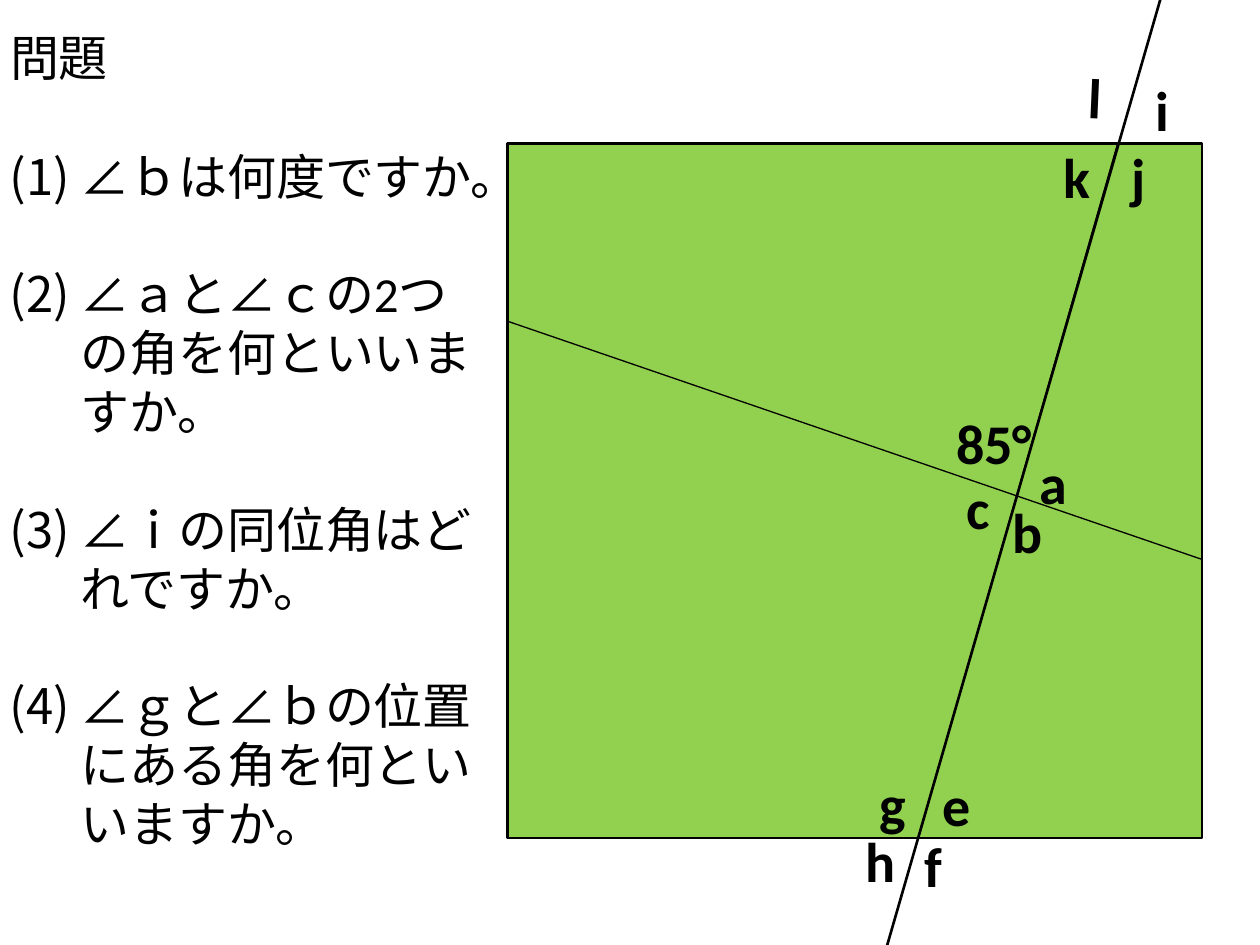
from dataclasses import dataclass

from lxml.etree import SubElement
from pptx import Presentation
from pptx.dml.color import RGBColor
from pptx.enum.shapes import MSO_CONNECTOR, MSO_SHAPE
from pptx.enum.text import MSO_ANCHOR, PP_ALIGN
from pptx.oxml.ns import qn
from pptx.util import Inches, Pt


@dataclass(frozen=True)
class Theme:
    font: str = "Calibri"
    ink: RGBColor = RGBColor(0x00, 0x00, 0x00)
    paper: RGBColor = RGBColor(0x92, 0xD0, 0x50)
    body_size: float = 28
    label_size: float = 32
    question_gap: float = 33.7
    thin: float = 0.75
    thick: float = 1.5


@dataclass(frozen=True)
class Box:
    left: float
    top: float
    width: float
    height: float

    def inches(self):
        return [Inches(v) for v in (self.left, self.top, self.width, self.height)]


THEME = Theme()
HEADING_BOX = Box(-0.02, 0.17, 3.92, 0.57)
QUESTIONS_BOX = Box(-0.02, 1.11, 3.92, 5.76)
SQUARE_BOX = Box(4.03, 1.14, 5.51, 5.51)

QUESTIONS = [
    "∠ｂは何度ですか。",
    "∠ａと∠ｃの2つの角を何といいますか。",
    "∠ｉの同位角はどれですか。",
    "∠ｇと∠ｂの位置にある角を何といいますか。",
]

# Start and end measured from the square's top left corner, then width
CROSSING_LINES = [
    ((4.84, 0), (3.26, 5.51), THEME.thin),
    ((5.51, 3.3), (0, 1.41), THEME.thin),
    ((5.25, -1.39), (2.85, 6.92), THEME.thick),
]

# Text, offset from the square's top left corner, width, rotation
ANGLE_LABELS = [
    ("l", 4.51, -0.69, 0.29, 2.6),
    ("i", 5.04, -0.59, 0.29, 0),
    ("k", 4.31, -0.06, 0.42, 0),
    ("j", 4.85, -0.06, 0.43, 0),
    ("85°", 3.46, 2.05, 1.18, 0),
    ("a", 4.12, 2.37, 0.42, 0),
    ("c", 3.54, 2.57, 0.39, 0),
    ("b", 3.91, 2.76, 0.44, 0),
    ("g", 2.85, 4.92, 0.41, 0),
    ("e", 3.35, 4.93, 0.43, 0),
    ("h", 2.74, 5.37, 0.44, 0),
    ("f", 3.21, 5.41, 0.36, 0),
]
LABEL_HEIGHT = 0.64


def write(paragraph, text, size=THEME.body_size, bold=False, space_before=0):
    paragraph.alignment = PP_ALIGN.LEFT
    paragraph.space_before = Pt(space_before)
    run = paragraph.add_run()
    run.text = text
    run.font.name = THEME.font
    run.font.size = Pt(size)
    run.font.bold = bold
    run.font.color.rgb = THEME.ink


def number(paragraph, indent=0.56):
    """Give the paragraph a hanging (1), (2), ... number."""
    properties = paragraph._p.get_or_add_pPr()
    properties.set("marL", str(Inches(indent)))
    properties.set("indent", str(-Inches(indent)))
    SubElement(properties, qn("a:buFont"), typeface="+mj-lt")
    SubElement(properties, qn("a:buAutoNum"), type="arabicParenBoth")


def add_text_box(slide, box):
    text_box = slide.shapes.add_textbox(*box.inches())
    text_box.text_frame.word_wrap = True
    return text_box


def place_heading(slide, box):
    heading = slide.shapes.title
    heading.left, heading.top, heading.width, heading.height = box.inches()
    heading.text_frame.vertical_anchor = MSO_ANCHOR.TOP
    write(heading.text_frame.paragraphs[0], "問題")


def add_questions(slide, box):
    frame = add_text_box(slide, box).text_frame
    for index, question in enumerate(QUESTIONS):
        paragraph = frame.add_paragraph() if index else frame.paragraphs[0]
        write(paragraph, question, space_before=THEME.question_gap if index else 0)
        number(paragraph)


def add_line(slide, box, start, end, width):
    ends = [Inches(origin + offset)
            for point in (start, end)
            for origin, offset in zip((box.left, box.top), point)]
    line = slide.shapes.add_connector(MSO_CONNECTOR.STRAIGHT, *ends)
    line.line.color.rgb = THEME.ink
    line.line.width = Pt(width)
    SubElement(line._element.spPr, qn("a:effectLst"))


def add_angle_diagram(slide, box):
    square = slide.shapes.add_shape(MSO_SHAPE.RECTANGLE, *box.inches())
    square.shadow.inherit = False
    square.fill.solid()
    square.fill.fore_color.rgb = THEME.paper
    square.line.color.rgb = THEME.ink
    square.line.width = Pt(THEME.thick)

    for start, end, width in CROSSING_LINES:
        add_line(slide, box, start, end, width)

    for text, x, y, width, rotation in ANGLE_LABELS:
        label = add_text_box(slide, Box(box.left + x, box.top + y, width, LABEL_HEIGHT))
        label.rotation = rotation
        write(label.text_frame.paragraphs[0], text, size=THEME.label_size, bold=True)


def main():
    presentation = Presentation()
    presentation.slide_width = Inches(10)
    presentation.slide_height = Inches(7.5)
    slide = presentation.slides.add_slide(presentation.slide_layouts.get_by_name("Title Only"))
    place_heading(slide, HEADING_BOX)
    add_angle_diagram(slide, SQUARE_BOX)
    add_questions(slide, QUESTIONS_BOX)
    presentation.save("out.pptx")


if __name__ == "__main__":
    main()
